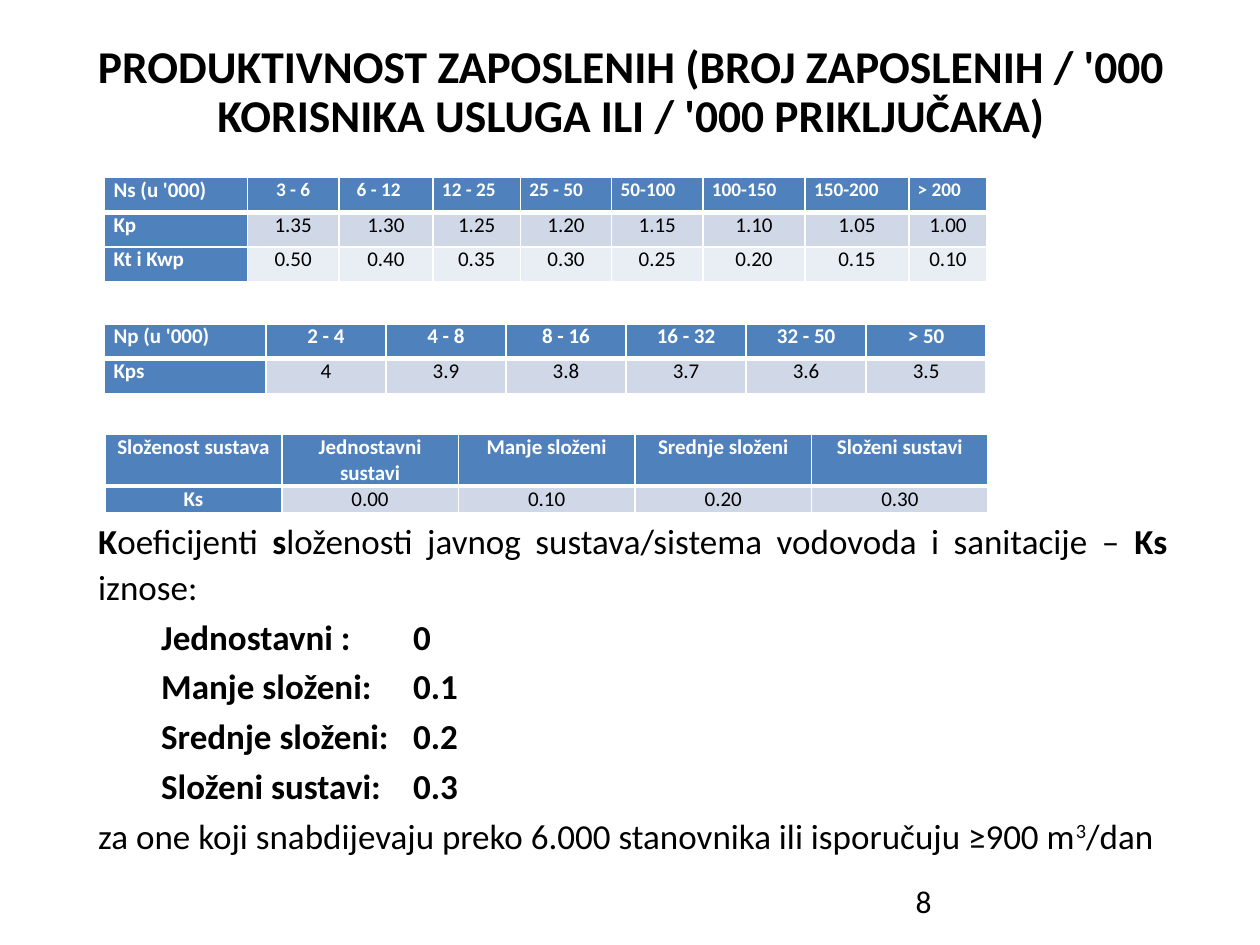
from dataclasses import dataclass

import pptx
import pptx.dml.color
import pptx.enum.text
import pptx.oxml
import pptx.oxml.ns
import pptx.util

Cm = pptx.util.Cm
Pt = pptx.util.Pt
ALIGN = pptx.enum.text.PP_ALIGN


@dataclass(frozen=True)
class Theme:
    font: str = "Calibri"
    ink: str = "000000"
    light: str = "FFFFFF"
    header: str = "4F81BD"
    bands: tuple = ("D0D8E8", "E9EDF4")
    title_size: int = 26
    body_size: int = 20
    number_size: int = 18
    table_size: int = 12
    small_size: int = 11


THEME = Theme()


def rgb(colour):
    return pptx.dml.color.RGBColor.from_string(colour)


def add_run(paragraph, text, size, colour=THEME.ink, bold=False):
    run = paragraph.add_run()
    run.text = text
    run.font.name = THEME.font
    run.font.size = Pt(size)
    run.font.bold = bold
    run.font.color.rgb = rgb(colour)
    return run


def add_text_frame(slide, left, top, width, height):
    frame = slide.shapes.add_textbox(Cm(left), Cm(top), Cm(width), Cm(height)).text_frame
    frame.word_wrap = True
    return frame


def add_borders(cell, row):
    """White grid, with a heavier rule between header and body."""
    widths = {"L": 1, "R": 1, "T": 3 if row == 1 else 1, "B": 3 if row == 0 else 1}
    properties = cell._tc.get_or_add_tcPr()
    for side, points in widths.items():
        properties.append(pptx.oxml.parse_xml(
            f'<a:ln{side} {pptx.oxml.ns.nsdecls("a")} w="{Pt(points)}">'
            f'<a:solidFill><a:srgbClr val="{THEME.light}"/></a:solidFill></a:ln{side}>'))


def add_table(slide, left, top, widths, heights, rows, label_align=ALIGN.JUSTIFY,
              head_align=ALIGN.CENTER, head_size=THEME.table_size):
    table = slide.shapes.add_table(len(rows), len(widths), Cm(left), Cm(top),
                                   Cm(sum(widths)), Cm(sum(heights))).table
    for column, width in zip(table.columns, widths):
        column.width = Cm(width)
    for r, (texts, height) in enumerate(zip(rows, heights)):
        table.rows[r].height = Cm(height)
        for c, text in enumerate(texts):
            cell = table.cell(r, c)
            cell.margin_left = cell.margin_right = Cm(0.18)
            cell.margin_top = cell.margin_bottom = 0
            add_borders(cell, r)
            heading = r == 0 or c == 0
            cell.fill.solid()
            cell.fill.fore_color.rgb = rgb(THEME.header if heading else THEME.bands[(r - 1) % 2])
            paragraph = cell.text_frame.paragraphs[0]
            if c == 0:
                paragraph.alignment = label_align
            else:
                paragraph.alignment = head_align if r == 0 else ALIGN.CENTER
            size = head_size if r == 0 and c > 0 else THEME.table_size
            add_run(paragraph, text, size, THEME.light if heading else THEME.ink, heading)
    return table


def add_body_paragraph(frame, first=False):
    paragraph = frame.paragraphs[0] if first else frame.add_paragraph()
    paragraph.alignment = ALIGN.JUSTIFY
    paragraph.line_spacing = 1.1
    paragraph.space_after = Pt(2)
    return paragraph


def add_coefficient(frame, label, value, stop):
    """Indented line whose value stands at its own tab stop."""
    paragraph = add_body_paragraph(frame)
    properties = paragraph._p.get_or_add_pPr()
    properties.set("marL", "0")
    properties.set("indent", str(Cm(1.27)))
    properties.append(pptx.oxml.parse_xml(
        f'<a:tabLst {pptx.oxml.ns.nsdecls("a")}><a:tab pos="{Cm(stop)}" algn="l"/></a:tabLst>'))
    add_run(paragraph, f"{label}\t{value}", THEME.body_size, bold=True)


def add_tables(slide):
    # Coefficients by number of users
    users = add_table(
        slide, 2.11, 3.58, [2.88, 1.84, 1.9, 1.76, 1.84, 1.84, 2.06, 2.09, 1.58], [0.7] * 3,
        [["Ns (u '000)", "3 - 6", "6 - 12", "12 - 25", "25 - 50", "50-100",
          "100-150", "150-200", "> 200"],
         ["Kp", "1.35", "1.30", "1.25", "1.20", "1.15", "1.10", "1.05", "1.00"],
         ["Kt i Kwp", "0.50", "0.40", "0.35", "0.30", "0.25", "0.20", "0.15", "0.10"]],
        head_align=ALIGN.JUSTIFY, head_size=THEME.small_size)
    users.cell(0, 1).text_frame.paragraphs[0].alignment = ALIGN.CENTER
    users.cell(0, 2).margin_left = Cm(0.36)

    # Coefficients by number of connections
    add_table(
        slide, 2.11, 6.53, [3.25] + [2.42] * 6, [0.7] * 2,
        [["Np (u '000)", "2 - 4", "4 - 8", "8 - 16", "16 - 32", "32 - 50", "> 50"],
         ["Kps", "4", "3.9", "3.8", "3.7", "3.6", "3.5"]])

    # Coefficients by system complexity
    add_table(
        slide, 2.12, 8.76, [3.56] * 5, [1.04, 0.53],
        [["Složenost sustava", "Jednostavni sustavi", "Manje složeni",
          "Srednje složeni", "Složeni sustavi"],
         ["Ks", "0.00", "0.10", "0.20", "0.30"]],
        label_align=ALIGN.CENTER)


def add_explanation(slide):
    frame = add_text_frame(slide, 1.73, 10.26, 22.05, 7.14)
    intro = add_body_paragraph(frame, first=True)
    for text, bold in [("K", True), ("oeficijenti ", False), ("s", True),
                       ("loženosti javnog sustava/sistema vodovoda i sanitacije – ", False),
                       ("Ks ", True), ("iznose:", False)]:
        add_run(intro, text, THEME.body_size, bold=bold)

    for label, value, stop in [("Jednostavni :", "0", 6.35), ("Manje složeni:", "0.1", 7.4),
                               ("Srednje složeni:", "0.2", 7.26),
                               ("Složeni sustavi:", "0.3", 7.26)]:
        add_coefficient(frame, label, value, stop)

    scope = add_body_paragraph(frame)
    add_run(scope, "za one koji snabdijevaju preko 6.000 stanovnika ili isporučuju ≥900 m",
            THEME.body_size)
    exponent = add_run(scope, "3", THEME.body_size)
    exponent.font._element.set("baseline", "30000")
    add_run(scope, "/dan", THEME.body_size)


def main():
    deck = pptx.Presentation()
    deck.slide_width, deck.slide_height = Cm(25.4), Cm(19.05)
    slide = deck.slides.add_slide(deck.slide_layouts[6])

    # Slide number
    number = add_text_frame(slide, 18.21, 17.65, 5.92, 1.02).paragraphs[0]
    add_run(number, "8", THEME.number_size)

    # Title
    title = add_text_frame(slide, 0.58, 0.76, 24.31, 2.77).paragraphs[0]
    title.alignment = ALIGN.CENTER
    title.line_spacing = 0.9
    add_run(title, "PRODUKTIVNOST ZAPOSLENIH (BROJ ZAPOSLENIH / '000 "
                   "KORISNIKA USLUGA ILI / '000 PRIKLJUČAKA)", THEME.title_size, bold=True)

    add_tables(slide)
    add_explanation(slide)
    deck.save("out.pptx")


if __name__ == "__main__":
    main()
